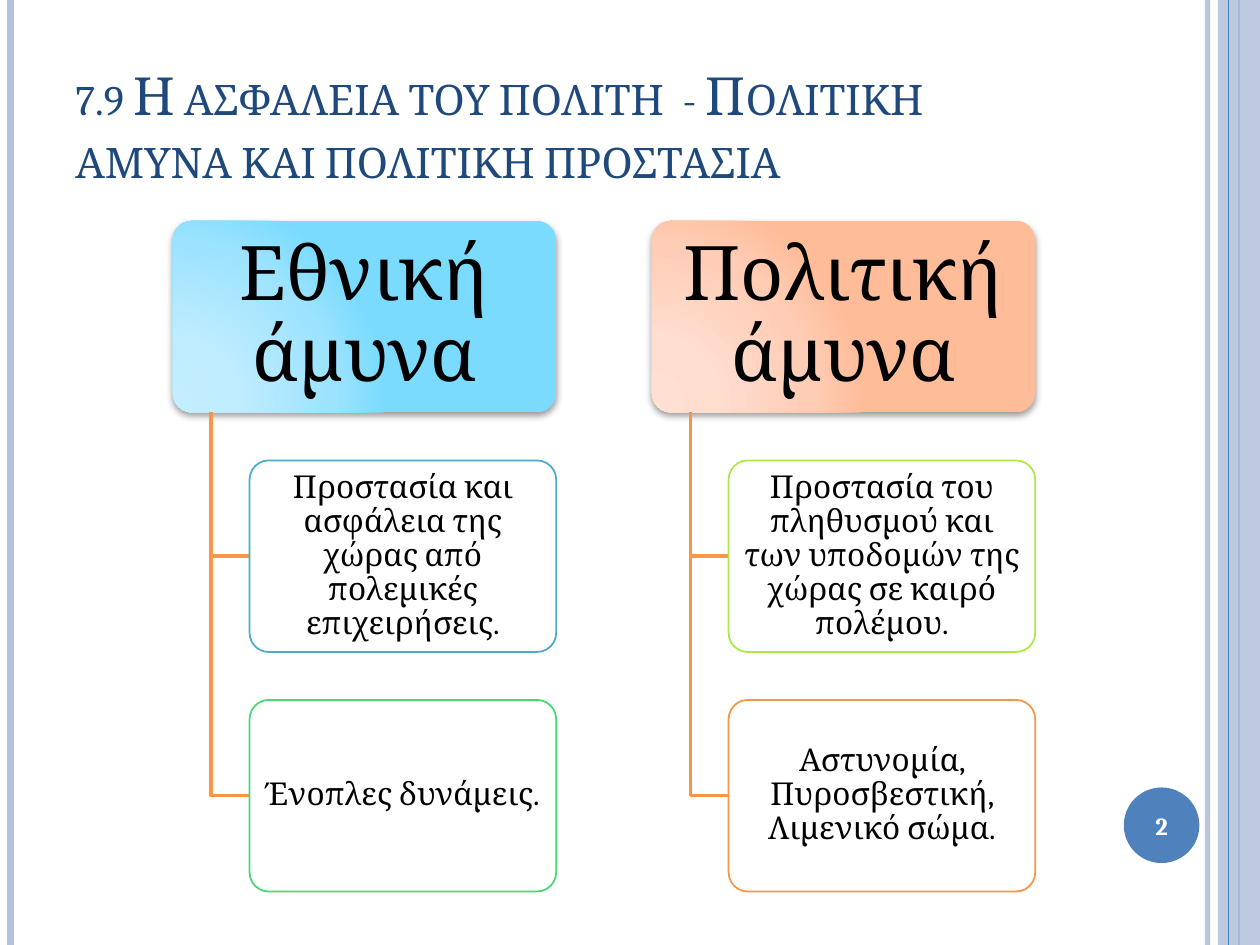
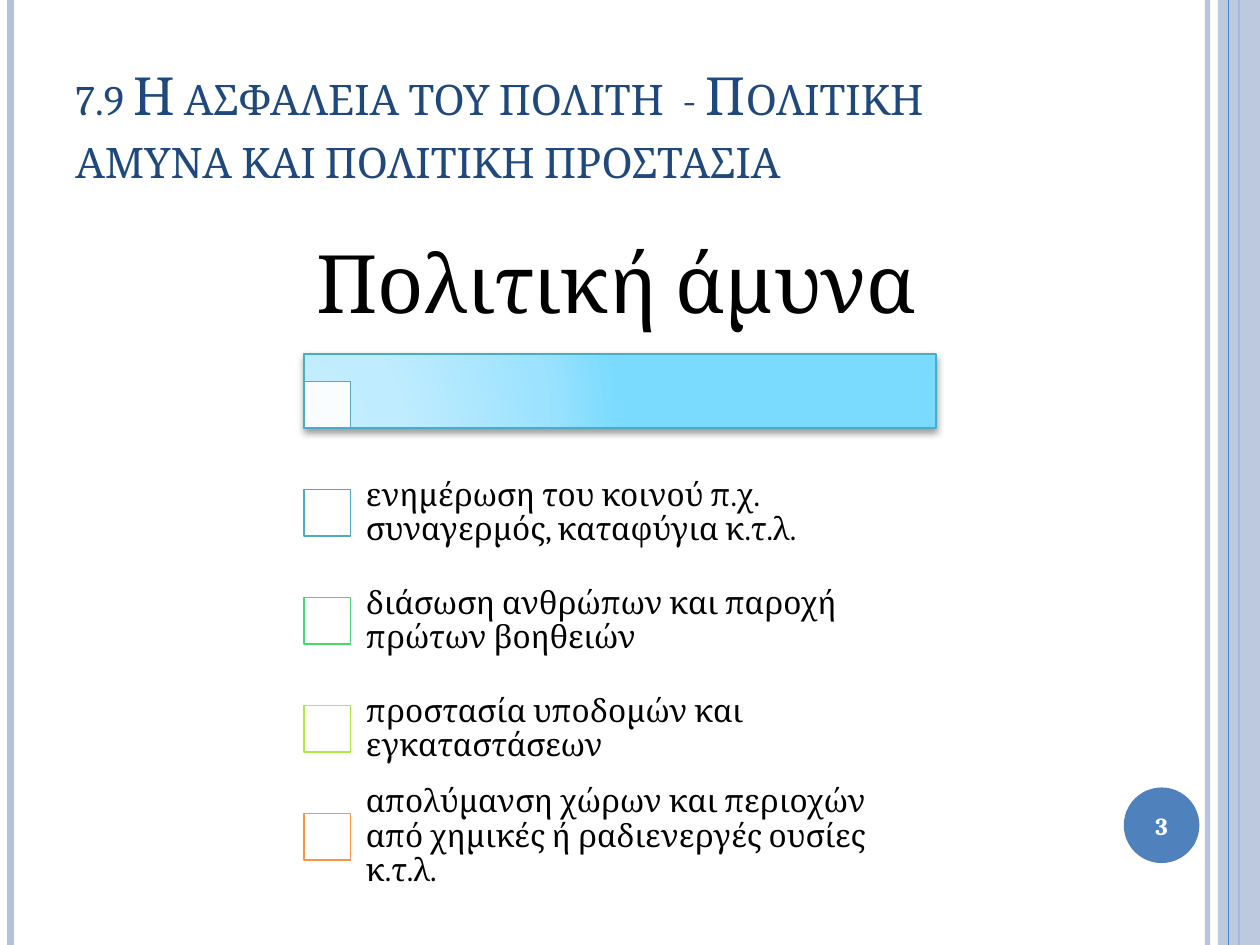
"""Build two slides on national and civil defence."""
from dataclasses import dataclass

from lxml.etree import SubElement as Sub
from pptx import Presentation
from pptx.dml.color import RGBColor as Rgb
from pptx.enum.shapes import MSO_CONNECTOR as Link, MSO_SHAPE as Kind
from pptx.enum.text import MSO_ANCHOR as Anchor, PP_ALIGN as Align
from pptx.oxml.ns import qn
from pptx.util import Pt


@dataclass(frozen=True)
class Theme:
    font: str = "Cambria"
    ink: str = "000000"
    white: str = "FFFFFF"
    navy: str = "1F497D"
    blue: str = "4F81BD"
    pale: str = "B3C1DB"
    teal: str = "4BACC6"
    green: str = "47D872"
    lime: str = "ACE946"
    orange: str = "F79646"
    sky: tuple = ("C4EEFF", "BFECFF", "9DE3FF", "7ADBFF")
    peach: tuple = ("FFE0D3", "FFDDCF", "FFCCB5", "FFBC99")
    stops: tuple = (0, 30, 75, 100)
    title: int = 30
    head: int = 43
    big: int = 46
    body: int = 18
    page: int = 14


T = Theme()
WIDE, HIGH = 720, 540
TITLE = "7.9 Η ασφαλεια του πολιτη  - Πολιτικη αμυνα και πολιτικη προστασια"
TREES = [
    ("Εθνική άμυνα", T.sky, [
        ("Προστασία και ασφάλεια της χώρας από πολεμικές επιχειρήσεις.", T.teal),
        ("Ένοπλες δυνάμεις.", T.green)]),
    ("Πολιτική άμυνα", T.peach, [
        ("Προστασία του πληθυσμού και των υποδομών της χώρας σε καιρό πολέμου.",
         T.lime),
        ("Αστυνομία, Πυροσβεστική, Λιμενικό σώμα.", T.orange)]),
]
TASKS = [
    ("ενημέρωση του κοινού π.χ. συναγερμός, καταφύγια κ.τ.λ.", T.teal),
    ("διάσωση ανθρώπων και παροχή πρώτων βοηθειών", T.green),
    ("προστασία υποδομών και εγκαταστάσεων", T.lime),
    ("απολύμανση χώρων και περιοχών από χημικές ή ραδιενεργές ουσίες κ.τ.λ.",
     T.orange),
]


def assign(item, vals):
    """Set each attribute named in a dict."""
    for key, val in vals.items():
        setattr(item, key, val)


def fade(item, share):
    """Make the colours set so far partly clear."""
    for tint in item._element.spPr.iter(qn("a:srgbClr")):
        Sub(tint, qn("a:alpha"), val=str(share * 1000))


def stroke(item, color, width):
    """Set line colour and width."""
    item.line.color.rgb = Rgb.from_string(color)
    item.line.width = Pt(width)


def write(item, text, size, color=T.ink, pad=(7.2, 3.6), align=Align.LEFT,
          anchor=Anchor.MIDDLE, space=0.9, bold=False):
    """Put one styled paragraph in a shape and return its run."""
    frame = item.text_frame
    side, edge = map(Pt, pad)
    assign(frame, dict(word_wrap=True, vertical_anchor=anchor,
                       margin_left=side, margin_right=side,
                       margin_top=edge, margin_bottom=edge))
    para = frame.paragraphs[0]
    assign(para, dict(alignment=align, line_spacing=space))
    run = para.add_run()
    run.text = text
    assign(run.font, dict(name=T.font, size=Pt(size), bold=bold))
    run.font.color.rgb = Rgb.from_string(color)
    return run


def label(slide, area, text, size, **style):
    """Add a text box."""
    return write(slide.shapes.add_textbox(*map(Pt, area)), text, size, **style)


def block(slide, kind, area, fill, edge=None, alpha=None):
    """Add a flat shape."""
    item = slide.shapes.add_shape(kind, *map(Pt, area))
    item.shadow.inherit = False
    item.fill.solid()
    item.fill.fore_color.rgb = Rgb.from_string(fill)
    if alpha:
        fade(item, alpha)
    if edge:
        stroke(item, edge, 1)
    else:
        item.line.fill.background()
    return item


def glow(item, tints):
    """Give a shape a radial gradient and a soft shadow."""
    item.fill.gradient()
    props = item._element.spPr
    grad = props.find(qn("a:gradFill"))
    grad.clear()
    stops = Sub(grad, qn("a:gsLst"))
    for pos, tint in zip(T.stops, tints):
        stop = Sub(stops, qn("a:gs"), pos=str(pos * 1000))
        Sub(stop, qn("a:srgbClr"), val=tint)
    route = Sub(grad, qn("a:path"), path="circle")
    Sub(route, qn("a:fillToRect"), l="5000", t="100000", r="120000", b="10000")
    shade = Sub(props.find(qn("a:effectLst")), qn("a:outerShdw"),
                blurRad=str(Pt(4)), dist=str(Pt(2)), dir="5400000",
                rotWithShape="0")
    tint = Sub(shade, qn("a:srgbClr"), val=T.ink)
    Sub(tint, qn("a:alpha"), val="40000")


def rule(slide, x, color, width, alpha=None):
    """Add a full-height upright line."""
    line = slide.shapes.add_connector(Link.STRAIGHT, Pt(x), 0, Pt(x), Pt(HIGH))
    stroke(line, color, width)
    if alpha:
        fade(line, alpha)
    Sub(line._element.spPr, qn("a:effectLst"))


def elbow(slide, x, top, right, low):
    """Add a bent branch line."""
    pen = slide.shapes.build_freeform(Pt(x), Pt(top))
    pen.add_line_segments([(Pt(x), Pt(low)), (Pt(right), Pt(low))], close=False)
    bend = pen.convert_to_shape()
    bend.shadow.inherit = False
    bend.fill.background()
    stroke(bend, T.orange, 2)


def start(deck, page):
    """Add a slide with side bands, page disc and title."""
    slide = deck.slides.add_slide(deck.slide_layouts[6])
    rule(slide, 690, T.pale, 3, 93)
    rule(slide, 6, T.pale, 4.5)
    rule(slide, 708, T.blue, 1.5)
    block(slide, Kind.RECTANGLE, (696, 0, 24, HIGH), T.pale, alpha=87)
    rule(slide, 702, T.blue, 0.75)
    disc = block(slide, Kind.OVAL, (642.2, 450, 43.2, 43.2), T.blue)
    write(disc, str(page), T.page, T.white, (0, 0), Align.CENTER, space=1,
          bold=True)
    run = label(slide, (36, 21.6, 588, 90), TITLE, T.title, color=T.navy,
                anchor=Anchor.BOTTOM, space=1)
    run.font._element.set("cap", "small")
    return slide


def card(slide, area, text, size, pad, fill=T.white, **look):
    """Add a rounded card with centred text."""
    item = block(slide, Kind.ROUNDED_RECTANGLE, area, fill, **look)
    item.adjustments[0] = 0.1
    write(item, text, size, pad=pad, align=Align.CENTER)
    return item


def tree(slide, left, head, tints, kids):
    """Add a heading card with its branches."""
    top, wide, high = 126.2, 219, 109.5
    root = card(slide, (left, top, wide, high), head, T.head, (6.5, 4.3))
    glow(root, tints)
    inset = left + wide / 5
    for row, (text, edge) in enumerate(kids, 1):
        y = top + row * high * 1.25
        elbow(slide, left + wide / 10, top + high, inset, y + high / 2)
        card(slide, (inset, y, wide * 0.8, high), text, T.body, (2.9, 1.9),
             edge=edge, alpha=90)


def tasks(slide):
    """Add the heading, its bar and the task list."""
    left, wide, side, step = 173.7, 361, 26.6, 61.7
    label(slide, (left, 126, wide, 76.3), "Πολιτική άμυνα", T.big, pad=(7.2, 4.3))
    bar = block(slide, Kind.RECTANGLE, (left, 202.2, wide, 42.5), T.white, T.teal)
    glow(bar, T.sky)
    block(slide, Kind.RECTANGLE, (left, 218.1, side, side), T.white, T.teal, 90)
    for row, (text, edge) in enumerate(TASKS):
        y = 262.2 + row * step
        block(slide, Kind.RECTANGLE, (left, y + (step - side) / 2, side, side),
              T.white, edge)
        label(slide, (199, y, 335.7, step), text, T.body, pad=(10.1, 10.1))


def main():
    """Build and save the deck."""
    deck = Presentation()
    assign(deck, dict(slide_width=Pt(WIDE), slide_height=Pt(HIGH)))
    slide = start(deck, 2)
    for col, (head, tints, kids) in enumerate(TREES):
        tree(slide, 98.8 + col * 273.75, head, tints, kids)
    tasks(start(deck, 3))
    deck.save("out.pptx")


if __name__ == "__main__":
    main()
